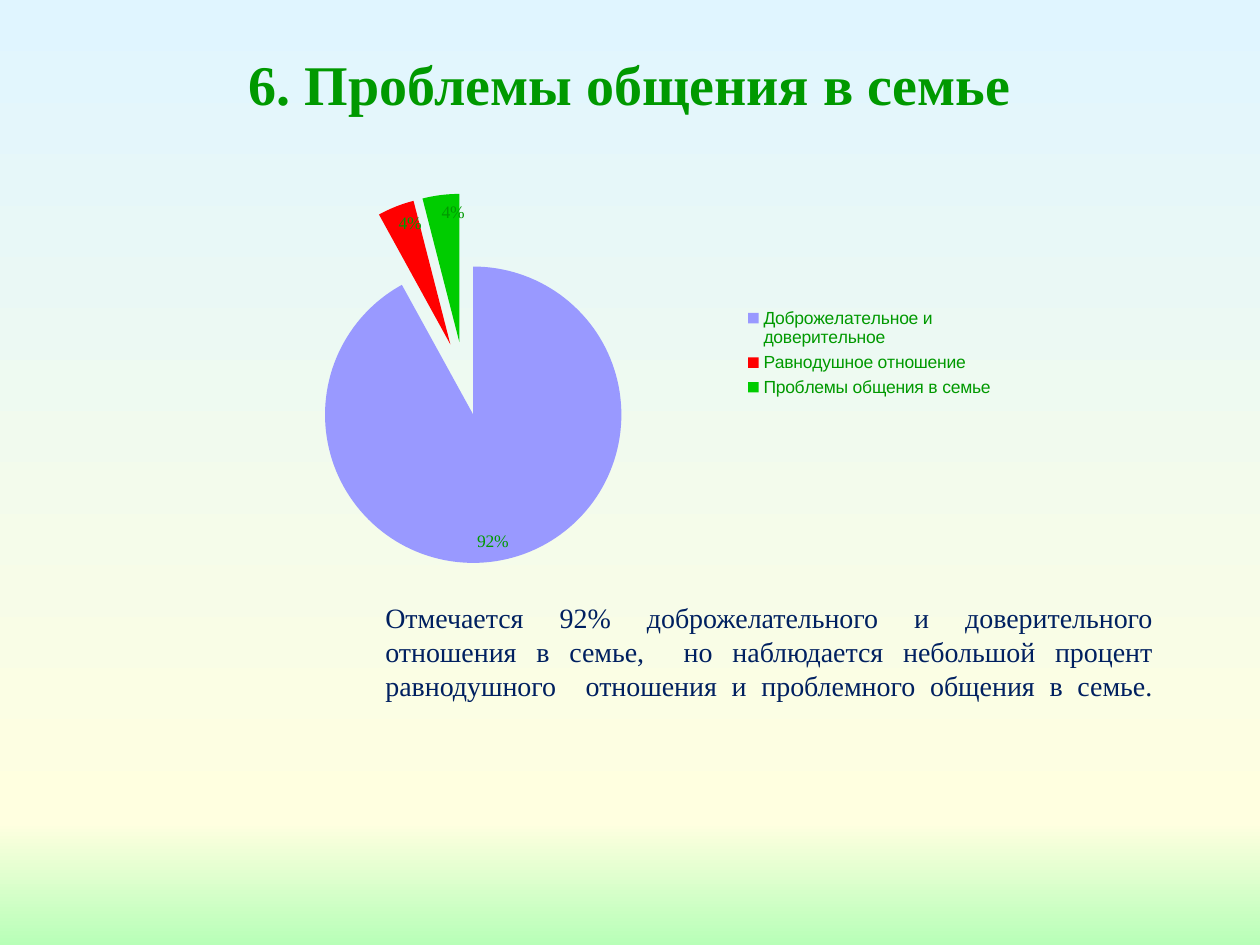
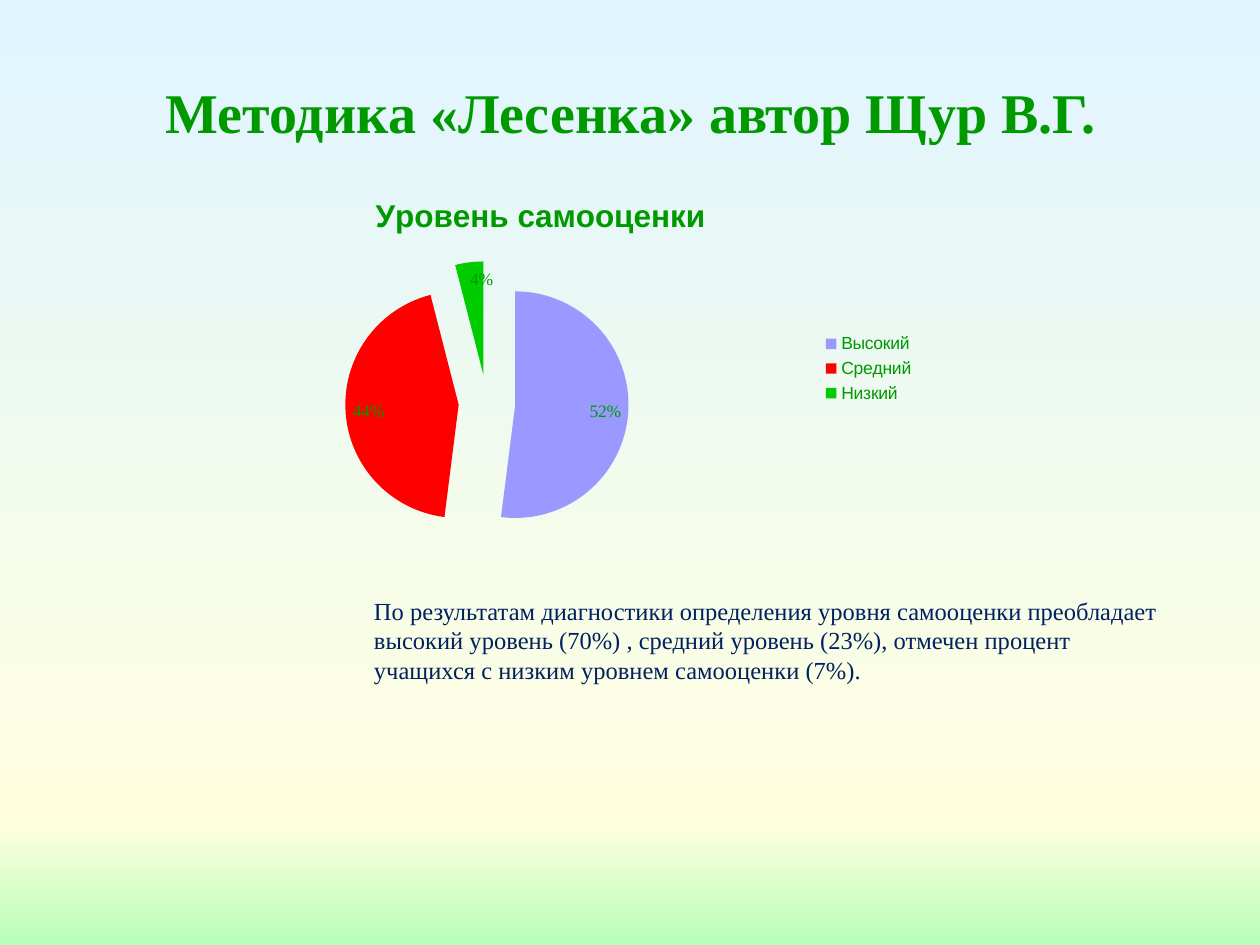
from copy import deepcopy
from lxml import etree
from pptx import Presentation
from pptx import util as u
from pptx.chart.data import CategoryChartData
from pptx.dml.color import RGBColor
from pptx.enum import chart as ch, text
from pptx.oxml.ns import qn

HUES = {"green": "009900", "navy": "002060", "sky": "E0F5FF", "cream": "FFFFE0",
        "mint": "B8FFB8", "lilac": "9999FF", "red": "FF0000", "lime": "00CC00"}
SERIF, SANS = "Times New Roman", "Arial"


def rgb(hue):
    return RGBColor.from_string(HUES[hue])


def style(font, name, size, hue, bold=False):
    font.name, font.size, font.bold = name, u.Pt(size), bold
    font.color.rgb = rgb(hue)


class Deck:
    """Holds the shared style and the current slide."""

    def __init__(self):
        self.prs = Presentation()
        self.prs.slide_width, self.prs.slide_height = u.Inches(10), u.Inches(7.5)
        self.slide = None
        self.sky()

    def sky(self):
        master = self.prs.slide_master
        fill = master.background.fill
        fill.gradient()
        fill.gradient_angle = 270
        stops = master.element.find(".//" + qn("p:bg")).find(".//" + qn("a:gsLst"))
        for stop in list(stops):
            stops.remove(stop)
        for pos, hue in ((0, "sky"), (87, "cream"), (100, "mint")):
            stop = etree.SubElement(stops, qn("a:gs"), pos=str(pos * 1000))
            etree.SubElement(stop, qn("a:srgbClr"), val=HUES[hue])

    def line(self, frame, words, size, hue, align, bold=False):
        para = frame.paragraphs[0]
        para.alignment = align
        run = para.add_run()
        run.text = words
        style(run.font, SERIF, size, hue, bold)
        look = run.font._element
        para.add_line_break()
        para._p[-1].append(deepcopy(look))
        end = deepcopy(look)
        end.tag = qn("a:endParaRPr")
        para._p.append(end)

    def title(self, words, left, top):
        self.slide = self.prs.slides.add_slide(self.prs.slide_layouts[5])
        box = self.slide.shapes.title
        box.left, box.top = u.Inches(left), u.Inches(top)
        box.width, box.height = u.Inches(9), u.Inches(1.25)
        frame = box.text_frame
        frame.vertical_anchor = text.MSO_ANCHOR.MIDDLE
        frame.auto_size = text.MSO_AUTO_SIZE.NONE
        self.line(frame, words, 32, "green", text.PP_ALIGN.CENTER, True)

    def note(self, words, area, size, align):
        frame = self.slide.shapes.add_textbox(*map(u.Inches, area)).text_frame
        frame.word_wrap = True
        frame.auto_size = text.MSO_AUTO_SIZE.SHAPE_TO_FIT_TEXT
        self.line(frame, words, size, "navy", align)

    def pie(self, area, name, parts, head=None, inner=None):
        data = CategoryChartData(number_format="0%")
        data.categories = list(parts)
        data.add_series(name, list(parts.values()))
        chart = self.slide.shapes.add_chart(
            ch.XL_CHART_TYPE.PIE, *map(u.Inches, area), data).chart
        style(chart.font, SERIF, 10, "green")
        chart.has_title = bool(head)
        if head:
            run = chart.chart_title.text_frame.paragraphs[0].add_run()
            run.text = head
            style(run.font, SANS, 18, "green", True)
        chart.has_legend = True
        chart.legend.position = ch.XL_LEGEND_POSITION.RIGHT
        chart.legend.include_in_layout = False
        style(chart.legend.font, SANS, 10, "green")
        plot = chart.plots[0]
        plot.vary_by_categories = True
        plot.has_data_labels = True
        tags = plot.data_labels
        tags.show_value, tags.show_percentage = True, False
        tags.number_format, tags.number_format_is_linked = "0%", False
        tags.position = ch.XL_LABEL_POSITION.INSIDE_END
        style(tags.font, SERIF, 10, "green")
        series = plot.series[0]
        for spot, hue in enumerate(("lilac", "red", "lime")):
            fill = series.points[spot].format.fill
            fill.solid()
            fill.fore_color.rgb = rgb(hue)
        self.burst(series, 25)
        if inner:
            self.place(chart, inner)

    def burst(self, series, gap):
        for point in series._element.findall(qn("c:dPt")):
            for old in point.findall(qn("c:explosion")):
                point.remove(old)
            mark = etree.Element(qn("c:explosion"), val=str(gap))
            point.find(qn("c:spPr")).addprevious(mark)

    def place(self, chart, inner):
        area = chart._chartSpace.find(".//" + qn("c:plotArea"))
        for old in area.findall(qn("c:layout")):
            area.remove(old)
        layout = etree.Element(qn("c:layout"))
        area.insert(0, layout)
        manual = etree.SubElement(layout, qn("c:manualLayout"))
        rules = [("layoutTarget", "inner"), ("xMode", "edge"), ("yMode", "edge")]
        for key, val in rules + list(zip("xywh", inner)):
            etree.SubElement(manual, qn("c:" + key), val=str(val))


def main():
    deck = Deck()
    deck.title("6. Проблемы общения в семье", 0.5, 0.3)
    deck.pie((1.61, 1.07, 6.38, 3.46), "Series 1",
             {"Доброжелательное и доверительное": 0.92,
              "Равнодушное отношение": 0.04,
              "Проблемы общения в семье": 0.04},
             inner=(0.07, 0.22, 0.51, 0.68))
    deck.note("Отмечается 92% доброжелательного и доверительного отношения в семье,  "
              "но наблюдается небольшой процент равнодушного  отношения и проблемного "
              "общения в семье.",
              (2.96, 4.72, 6.29, 1.18), 16, text.PP_ALIGN.JUSTIFY)

    deck.title("Методика «Лесенка» автор Щур В.Г.", 0.51, 0.52)
    level = "Уровень самооценки"
    deck.pie((1.22, 1.39, 6.14, 3.07), level,
             {"Высокий": 0.52, "Средний": 0.44, "Низкий": 0.04}, head=level)
    deck.note("По результатам диагностики определения уровня самооценки преобладает "
              "высокий уровень (70%) , средний уровень (23%), отмечен процент учащихся "
              "с низким уровнем самооценки (7%).",
              (2.87, 4.68, 6.46, 1.11), 14, text.PP_ALIGN.LEFT)
    deck.prs.save("out.pptx")


if __name__ == "__main__":
    main()
